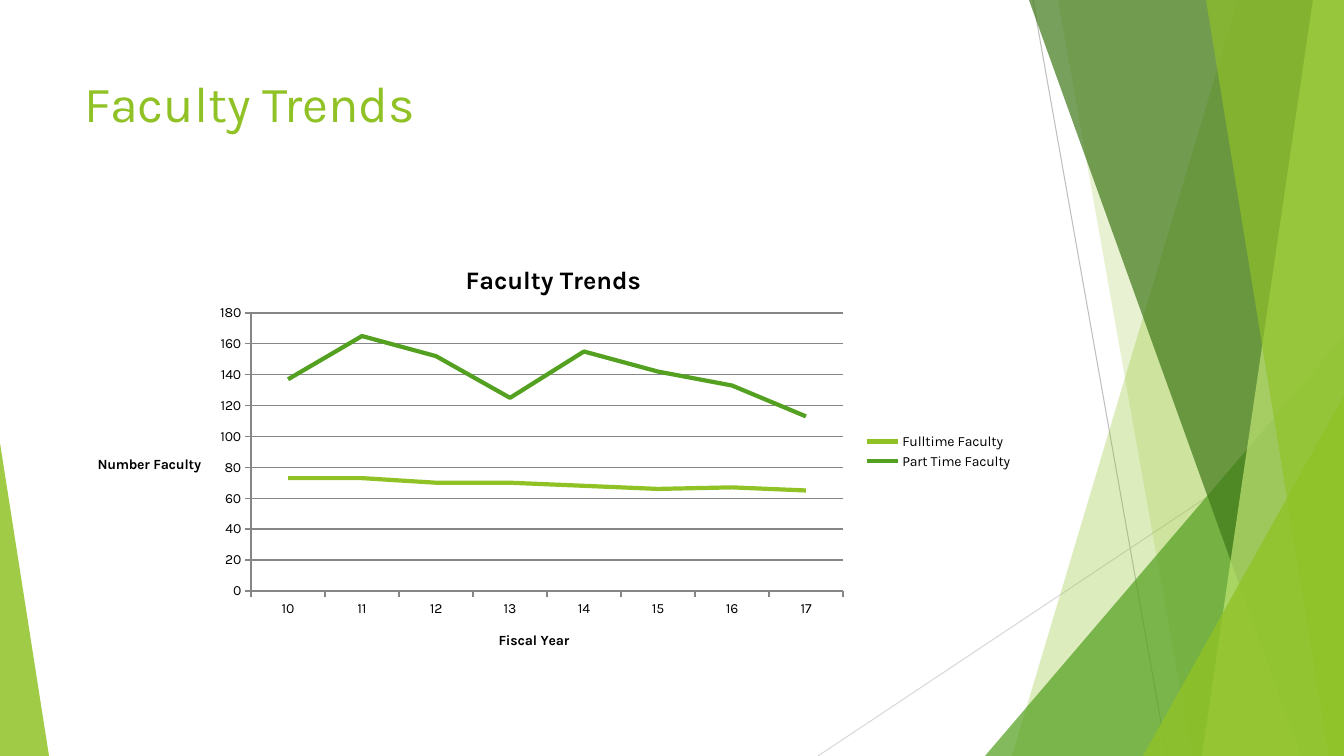
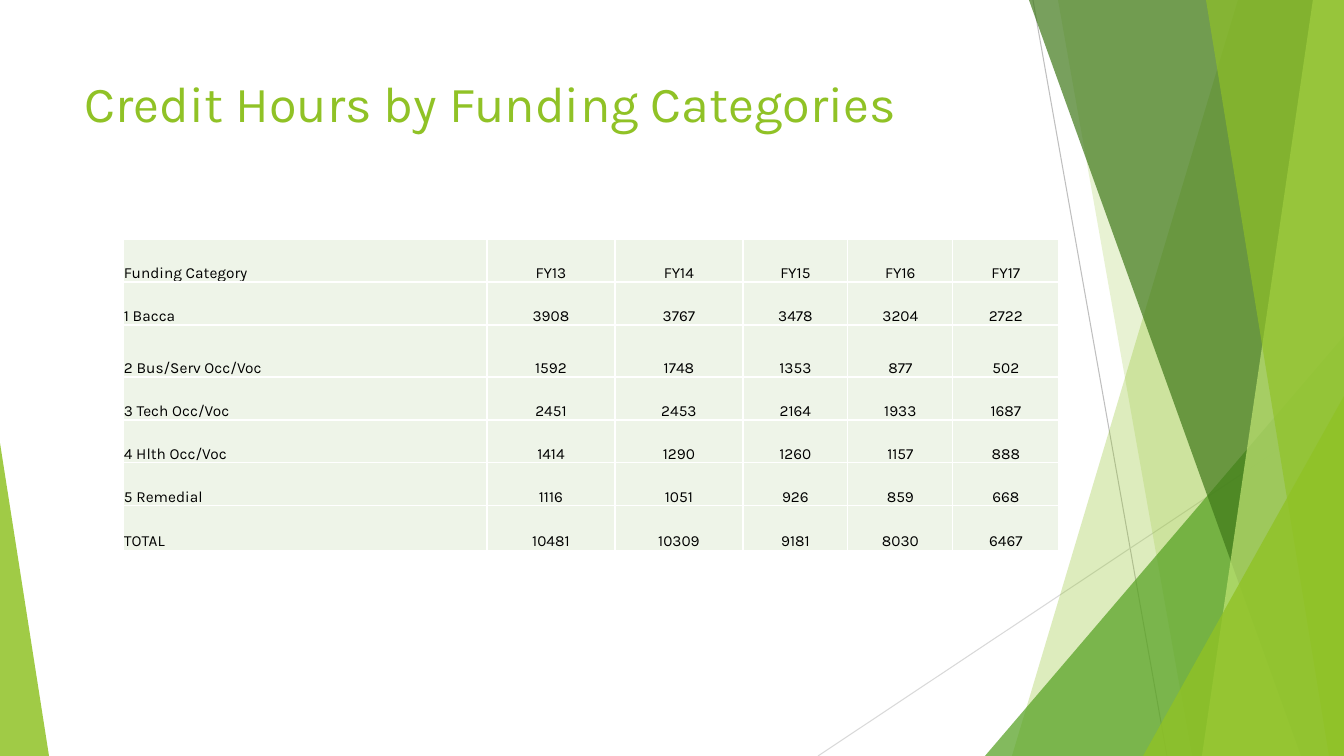
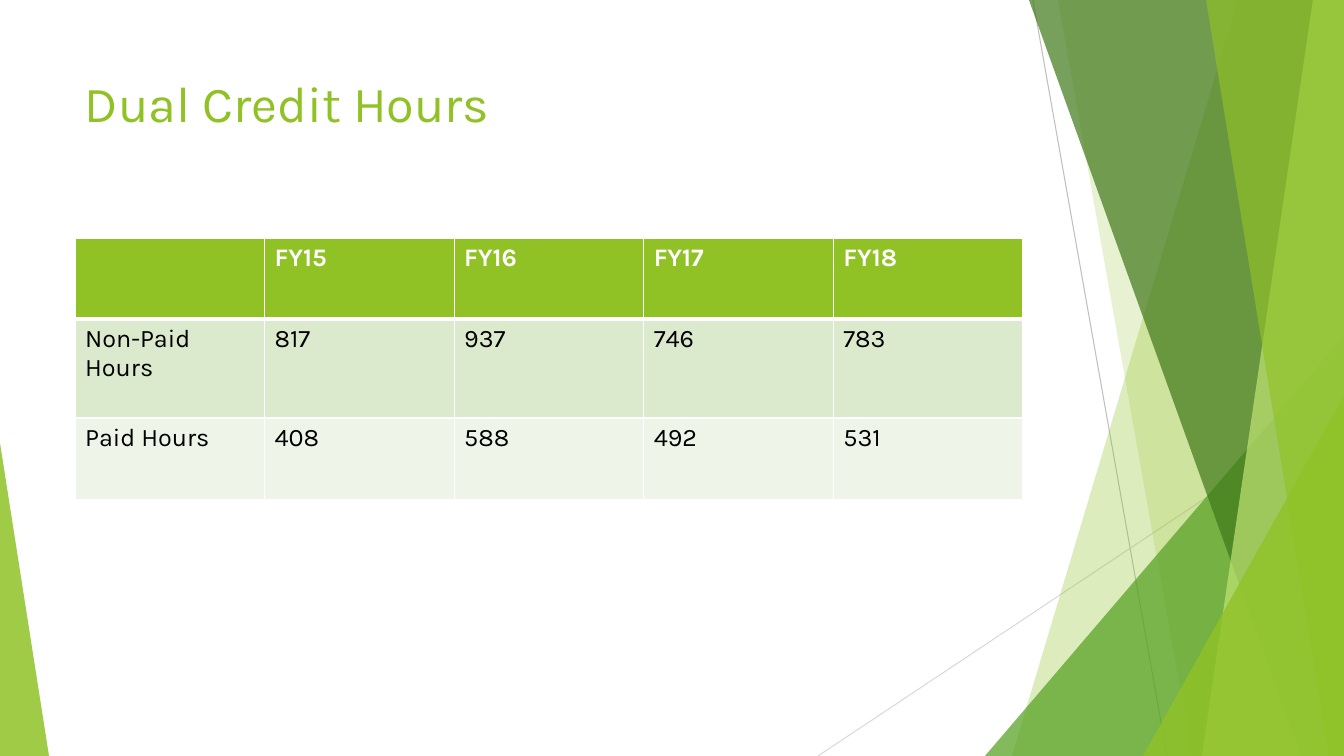
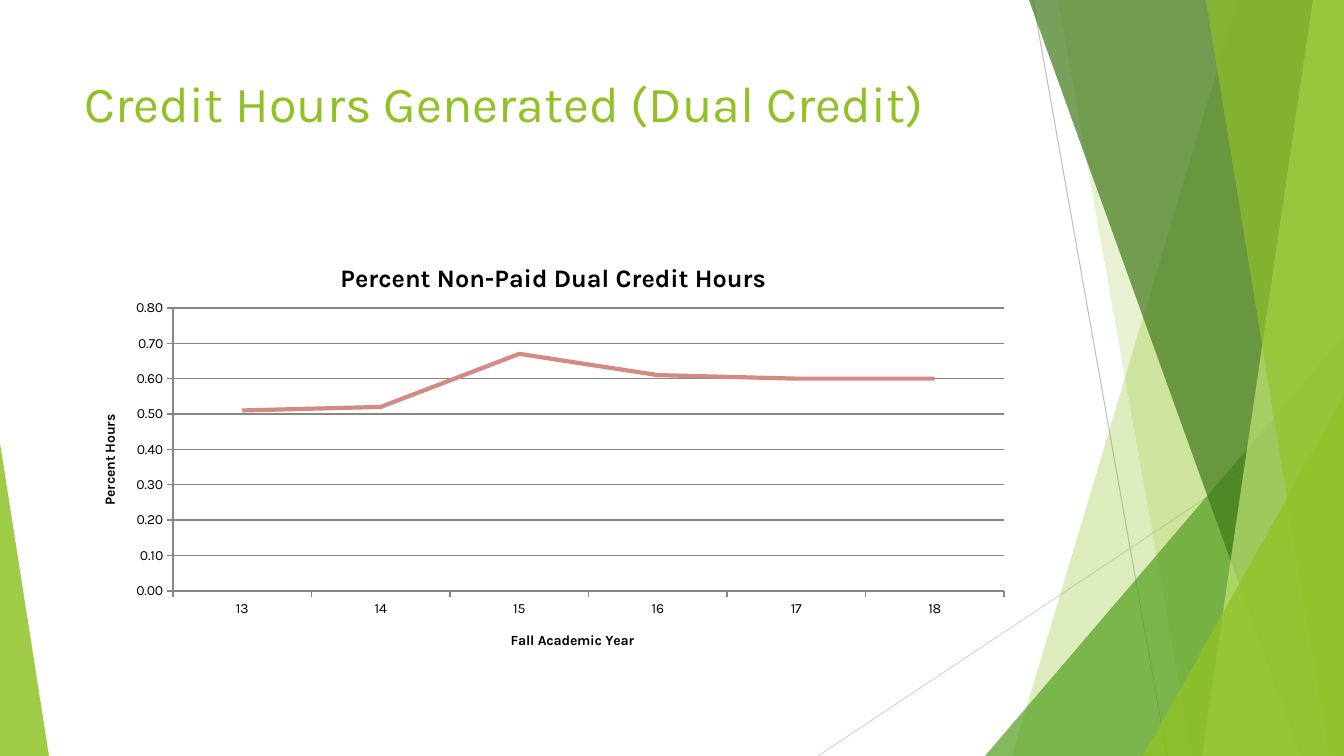
from collections import namedtuple

from pptx import Presentation
from pptx import util as u
from pptx.chart.data import CategoryChartData
from pptx.dml.color import RGBColor
from pptx.enum import chart as charts, shapes, text
from pptx.oxml import parse_xml
from pptx.oxml.ns import nsdecls, qn

# Shared style
SCALE = 12192000 / 1344  # EMU in one px
FONT = "Karla"
LIME, GREEN, FOREST, PALE_LIME = "90C226", "54A021", "3F7819", "C0E474"
ROSE, GRID = "D38A85", "868686"
BLACK, WHITE = "000000", "FFFFFF"
BAND_DARK, BAND_LIGHT = "DBE9CD", "EEF4E8"

Box = namedtuple("Box", "left top width height")
PAGE = Box(0, 0, 1344, 756)
TITLE = Box(75, 67, 948, 145)
BODY = Box(75, 238, 948, 427)


def px(length):
    return u.Emu(round(length * SCALE))


def emu(box):
    return [px(side) for side in box]


def color(code):
    return RGBColor.from_string(code)


def set_font(font, size, code, bold=False):
    font.name, font.size, font.bold = FONT, u.Pt(size), bold
    font.color.rgb = color(code)


# Backdrop
def tint(shape, code, opacity):
    shape.shadow.inherit = False
    shape.line.fill.background()
    shape.fill.solid()
    shape.fill.fore_color.rgb = color(code)
    srgb = shape.element.spPr.find(".//" + qn("a:srgbClr"))
    srgb.append(parse_xml(f'<a:alpha {nsdecls("a")} val="{opacity * 1000}"/>'))


def add_ray(group, start, end, code):
    ray = group.shapes.add_connector(
        shapes.MSO_CONNECTOR.STRAIGHT, *emu(start + end))
    ray.line.color.rgb = color(code)
    ray.line.width = u.Pt(0.75)
    ray.element.spPr.append(parse_xml(f'<a:effectLst {nsdecls("a")}/>'))


def add_pane(group, box, head, foot, code, opacity):
    """Full-height pane from a slanted left side to the right edge."""
    right, bottom = box.left + box.width, box.top + box.height
    outline = group.shapes.build_freeform(box.left + head, box.top, scale=SCALE)
    outline.add_line_segments(
        [(right, box.top), (right, bottom), (box.left + foot, bottom)], close=True)
    tint(outline.convert_to_shape(), code, opacity)


def add_wedge(group, box, left, width, height, apex, code, opacity):
    """Right triangle standing on the bottom edge."""
    place = Box(box.left + left, box.top + box.height - height, width, height)
    wedge = group.shapes.add_shape(
        shapes.MSO_SHAPE.ISOSCELES_TRIANGLE, *emu(place))
    wedge.adjustments[0] = apex
    tint(wedge, code, opacity)


def add_backdrop(page, box):
    group = page.shapes.add_group_shape()
    right, bottom = box.left + box.width, box.top + box.height
    add_ray(group, (box.left + 1033, box.top), (box.left + 1167, bottom), "BFBFBF")
    add_ray(group, (right, box.top + 406), (box.left + 818, bottom), "D9D9D9")
    add_pane(group, box, 1238, 1012, LIME, 30)
    add_pane(group, box, 1058, 1192, LIME, 20)
    add_wedge(group, box, 985, 359, 420, 1, GREEN, 72)
    add_pane(group, box, 1029, 1301, FOREST, 70)
    add_pane(group, box, 1313, 1202, PALE_LIME, 70)
    add_pane(group, box, 1206, 1329, LIME, 65)
    add_wedge(group, box, 1143, 201, 360, 1, LIME, 80)
    add_wedge(group, box, 0, 49, 313, 0, LIME, 85)
    return group


def share_backdrop(page):
    """Move the backdrop to the layout, so that every page shows it."""
    tree = page.slide_layout.shapes.element
    for holder in list(page.slide_layout.placeholders):
        tree.remove(holder.element)
    tree.append(add_backdrop(page, PAGE).element)


# Title
def add_title(page, box, words):
    frame = page.shapes.add_textbox(*emu(box)).text_frame
    frame.word_wrap = True
    frame.vertical_anchor = text.MSO_ANCHOR.TOP
    para = frame.paragraphs[0]
    para.text = words
    set_font(para.font, 36, LIME)


# Tables
def set_borders(cell, bottom=1):
    widths = {"lnL": 1, "lnR": 1, "lnT": 1, "lnB": bottom}
    props = cell._tc.get_or_add_tcPr()
    for index, (side, points) in enumerate(widths.items()):
        props.insert(index, parse_xml(
            f'<a:{side} {nsdecls("a")} w="{u.Pt(points)}"><a:solidFill>'
            f'<a:srgbClr val="{WHITE}"/></a:solidFill></a:{side}>'))


def add_grid(page, box, rows, widths, heights):
    """Place a table and yield each cell with its row, column and paragraph."""
    table = page.shapes.add_table(len(rows), len(widths), *emu(box)).table
    table.first_row = table.horz_banding = False
    for column, width in zip(table.columns, widths):
        column.width = px(width)
    for line, height in zip(table.rows, heights):
        line.height = px(height)
    for r, row in enumerate(rows):
        for c, words in enumerate(row):
            cell = table.cell(r, c)
            cell.text = words
            cell.fill.solid()
            yield r, c, cell, cell.text_frame.paragraphs[0]


def add_category_table(page, box, rows):
    widths = [364, 128, 128, 105, 105, 106]
    heights = [43, 43, 52, 43, 43, 43, 45]
    for r, c, cell, para in add_grid(page, box, rows, widths, heights):
        cell.fill.fore_color.rgb = color(BAND_LIGHT)
        cell.vertical_anchor = text.MSO_ANCHOR.BOTTOM
        cell.margin_left = cell.margin_right = cell.margin_top = px(1)
        cell.margin_bottom = 0
        set_borders(cell)
        set_font(para.font, 11, BLACK)
        if c:
            para.alignment = text.PP_ALIGN.CENTER


def add_hours_table(page, box, rows):
    widths = [box.width / len(rows[0])] * len(rows[0])
    fills = [LIME, BAND_DARK, BAND_LIGHT]
    for r, c, cell, para in add_grid(page, box, rows, widths, [81, 99, 82]):
        header = r == 0
        cell.fill.fore_color.rgb = color(fills[r])
        set_borders(cell, bottom=3 if header else 1)
        set_font(para.font, 18, WHITE if header else BLACK, bold=header)


# Charts
def set_layout(element, box, place, inner=False):
    """Pin a chart part at a place given in px from the chart's corner."""
    old = element.find(qn("c:layout"))
    if old is not None:
        element.remove(old)
    totals = (box.width, box.height) * 2
    shares = [round(side / total, 4) for side, total in zip(place, totals)]
    tags = '<c:layoutTarget val="inner"/>' if inner else ""
    tags += '<c:xMode val="edge"/><c:yMode val="edge"/>'
    tags += "".join(f'<c:{tag} val="{share}"/>' for tag, share in zip("xywh", shares))
    layout = parse_xml(f'<c:layout {nsdecls("c")}><c:manualLayout>{tags}'
                       "</c:manualLayout></c:layout>")
    element.insert(0 if element.find(qn("c:tx")) is None else 1, layout)


def set_chart_title(title, box, words, size, place, turn=0):
    para = title.text_frame.paragraphs[0]
    para.text = words
    set_font(para.font, size, BLACK, bold=True)
    body = title.element.find(".//" + qn("a:bodyPr"))
    body.set("rot", str(turn * 60000))
    body.set("vert", "horz")
    set_layout(title.element, box, place)


def add_line_chart(page, box, categories, series, plot, titles, top, step,
                   number_format="General", turn=0, legend=False):
    """titles holds words and place for the chart, category and value axis."""
    data = CategoryChartData()
    data.categories = categories
    for name, values, _ in series:
        data.add_series(name, values)
    chart = page.shapes.add_chart(
        charts.XL_CHART_TYPE.LINE, *emu(box), data).chart
    set_font(chart.font, 10, BLACK)
    chart.plots[0].vary_by_categories = False
    set_layout(chart.element.chart.plotArea, box, plot, inner=True)

    for line, (_, _, code) in zip(chart.plots[0].series, series):
        line.smooth = False
        line.format.line.color.rgb = color(code)
        line.format.line.width = u.Pt(3)

    # Axes and grid
    across, up = chart.category_axis, chart.value_axis
    up.minimum_scale, up.maximum_scale, up.major_unit = 0, top, step
    up.has_major_gridlines = True
    up.tick_labels.number_format = number_format
    up.tick_labels.number_format_is_linked = False
    for axis in (across, up):
        axis.major_tick_mark = charts.XL_TICK_MARK.OUTSIDE
    for part in (across, up, up.major_gridlines):
        part.format.line.color.rgb = color(GRID)
        part.format.line.width = u.Pt(1)

    # Titles and legend
    chart.has_title = True
    chart.chart_title.include_in_layout = False
    holders = [chart.chart_title, across.axis_title, up.axis_title]
    for holder, (words, place), size, angle in zip(
            holders, titles, (18, 10, 10), (0, 0, turn)):
        set_chart_title(holder, box, words, size, place, angle)
    chart.has_legend = legend
    if legend:
        chart.legend.position = charts.XL_LEGEND_POSITION.RIGHT
        chart.legend.include_in_layout = False


# Pages
def fill_faculty(page):
    add_line_chart(
        page, BODY, [str(year) for year in range(10, 18)],
        [("Fulltime Faculty", (73, 73, 70, 70, 68, 66, 67, 65), LIME),
         ("Part Time Faculty", (137, 165, 152, 125, 155, 142, 133, 113), GREEN)],
        plot=Box(176, 75, 592, 278),
        titles=[("Faculty Trends", (386, 21)), ("Fiscal Year", (421, 391)),
                ("Number Faculty", (20, 215))],
        top=180, step=20, legend=True)


def fill_categories(page):
    add_category_table(page, Box(123, 239, 936, 312), [
        ("Funding Category", "FY13", "FY14", "FY15", "FY16", "FY17"),
        ("1 Bacca", "3908", "3767", "3478", "3204", "2722"),
        ("2 Bus/Serv Occ/Voc", "1592", "1748", "1353", "877", "502"),
        ("3 Tech Occ/Voc", "2451", "2453", "2164", "1933", "1687"),
        ("4 Hlth Occ/Voc", "1414", "1290", "1260", "1157", "888"),
        ("5 Remedial", "1116", "1051", "926", "859", "668"),
        ("TOTAL", "10481", "10309", "9181", "8030", "6467"),
    ])


def fill_dual_hours(page):
    add_hours_table(page, BODY._replace(height=262), [
        ("", "FY15", "FY16", "FY17", "FY18"),
        ("Non-Paid Hours", "817", "937", "746", "783"),
        ("Paid Hours", "408", "588", "492", "531"),
    ])


def fill_dual_percent(page):
    add_line_chart(
        page, BODY, [str(year) for year in range(13, 19)],
        [("Series 1", (0.51, 0.52, 0.67, 0.61, 0.6, 0.6), ROSE)],
        plot=Box(98, 70, 831, 283),
        titles=[("Percent Non-Paid Dual Credit Hours", (261, 19)),
                ("Fall Academic Year", (433, 391)), ("Percent Hours", (23, 174))],
        top=0.8, step=0.1, number_format="#,##0.00", turn=-90)


def main():
    deck = Presentation()
    deck.slide_width, deck.slide_height = px(PAGE.width), px(PAGE.height)
    blank = deck.slide_layouts[6]
    contents = [
        ("Faculty Trends", fill_faculty),
        ("Credit Hours by Funding Categories", fill_categories),
        ("Dual Credit Hours", fill_dual_hours),
        ("Credit Hours Generated (Dual Credit)", fill_dual_percent),
    ]
    for number, (title, fill) in enumerate(contents):
        page = deck.slides.add_slide(blank)
        if number == 0:
            share_backdrop(page)
        add_title(page, TITLE, title)
        fill(page)
    deck.save("out.pptx")


if __name__ == "__main__":
    main()
